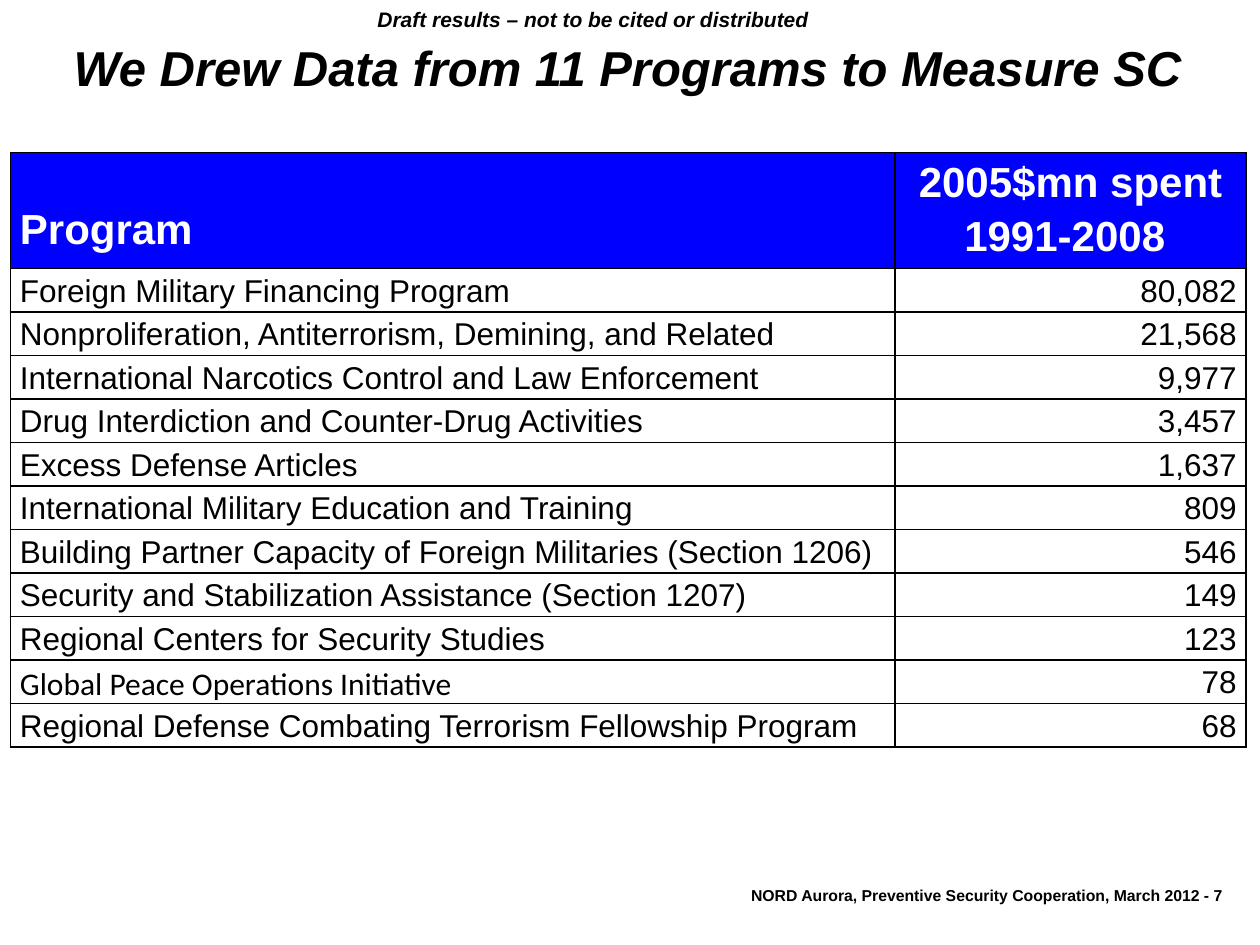
from lxml import etree
from pptx import Presentation
from pptx.dml.color import RGBColor
from pptx.enum.text import MSO_ANCHOR, PP_ALIGN
from pptx.oxml.ns import qn
from pptx.util import Pt

LEFT, CENTER, RIGHT = PP_ALIGN.LEFT, PP_ALIGN.CENTER, PP_ALIGN.RIGHT
TOP, MIDDLE = MSO_ANCHOR.TOP, MSO_ANCHOR.MIDDLE

# Content
TITLE = "We Drew Data from 11 Programs to Measure SC"
DRAFT_NOTICE = "Draft results – not to be cited or distributed"
FOOTER = "NORD Aurora, Preventive Security Cooperation, March 2012 - 7"
HEADINGS = ("Program", "2005$mn spent\n1991-2008 ")
PROGRAMS = [
    ("Foreign Military Financing Program", 80082),
    ("Nonproliferation, Antiterrorism, Demining, and Related", 21568),
    ("International Narcotics Control and Law Enforcement", 9977),
    ("Drug Interdiction and Counter-Drug Activities", 3457),
    ("Excess Defense Articles", 1637),
    ("International Military Education and Training", 809),
    ("Building Partner Capacity of Foreign Militaries (Section 1206)", 546),
    ("Security and Stabilization Assistance (Section 1207)", 149),
    ("Regional Centers for Security Studies", 123),
    ("Global Peace Operations Initiative", 78),
    ("Regional Defense Combating Terrorism Fellowship Program", 68),
]
CALIBRI_PROGRAM = "Global Peace Operations Initiative"

THEME = {
    "font": "Arial", "second_font": "Calibri",
    "black": RGBColor(0, 0, 0), "white": RGBColor(255, 255, 255),
    "header": RGBColor(0, 0, 255), "border": "000000", "border_width": 1,
    "title": 28, "heading": 24, "body": 18, "notice": 12, "footer": 9,
}

# Layout in points
COLUMN_WIDTHS = (505.5, 200.5)
HEADER_HEIGHT, ROW_HEIGHT = 61, 24.4
TABLE_LEFT, TABLE_TOP = 6, 87.2


def write_text(frame, text, size, align=LEFT, color=THEME["black"], bold=False,
               italic=False, font=THEME["font"], line_spacing=1.0):
    frame.text = text
    for paragraph in frame.paragraphs:
        paragraph.alignment = align
        paragraph.line_spacing = line_spacing
        paragraph.space_before = Pt(0)
        for run in paragraph.runs:
            run.font.name = font
            run.font.size = Pt(size)
            run.font.bold = bold
            run.font.italic = italic
            run.font.color.rgb = color


def add_label(slide, box, text, **text_format):
    label = slide.shapes.add_textbox(*map(Pt, box))
    label.text_frame.word_wrap = False
    write_text(label.text_frame, text, bold=True, **text_format)


def add_borders(cell):
    properties = cell._tc.get_or_add_tcPr()
    for position, side in enumerate(("a:lnL", "a:lnR", "a:lnT", "a:lnB")):
        line = etree.Element(qn(side), w=str(Pt(THEME["border_width"])))
        fill = etree.SubElement(line, qn("a:solidFill"))
        etree.SubElement(fill, qn("a:srgbClr"), val=THEME["border"])
        properties.insert(position, line)


def write_cell(cell, text, fill=None, line_spacing=1.15, **text_format):
    cell.margin_left = cell.margin_right = Pt(5.4)
    cell.margin_top = cell.margin_bottom = 0
    cell.vertical_anchor = TOP
    if fill is None:
        cell.fill.background()
    else:
        cell.fill.solid()
        cell.fill.fore_color.rgb = fill
    write_text(cell.text_frame, text, line_spacing=line_spacing, **text_format)
    add_borders(cell)


def add_program_table(slide):
    height = HEADER_HEIGHT + ROW_HEIGHT * len(PROGRAMS)
    table = slide.shapes.add_table(
        len(PROGRAMS) + 1, len(HEADINGS), Pt(TABLE_LEFT), Pt(TABLE_TOP),
        Pt(sum(COLUMN_WIDTHS)), Pt(height)).table
    table.horz_banding = False
    for column, width in zip(table.columns, COLUMN_WIDTHS):
        column.width = Pt(width)
    for index, row in enumerate(table.rows):
        row.height = Pt(ROW_HEIGHT if index else HEADER_HEIGHT)

    # Header row; the wide line sets "Program" level with the second line
    heading_format = dict(size=THEME["heading"], color=THEME["white"], bold=True,
                          fill=THEME["header"])
    write_cell(table.cell(0, 0), HEADINGS[0], line_spacing=2.15, **heading_format)
    write_cell(table.cell(0, 1), HEADINGS[1], align=CENTER, **heading_format)

    # One row per program
    for index, (program, spent) in enumerate(PROGRAMS, start=1):
        font = THEME["second_font" if program == CALIBRI_PROGRAM else "font"]
        write_cell(table.cell(index, 0), program, size=THEME["body"], font=font)
        write_cell(table.cell(index, 1), f"{spent:,}", size=THEME["body"], align=RIGHT)


def main():
    presentation = Presentation()
    presentation.slide_width, presentation.slide_height = Pt(720), Pt(540)
    slide = presentation.slides.add_slide(presentation.slide_layouts[5])

    # Title
    title = slide.shapes.title
    title.left, title.top, title.width, title.height = map(Pt, (34.5, 21, 648, 42.5))
    frame = title.text_frame
    frame.margin_left = frame.margin_right = frame.margin_top = 0
    frame.margin_bottom = Pt(8)
    frame.vertical_anchor = MIDDLE
    write_text(frame, TITLE, THEME["title"], align=CENTER, bold=True, italic=True)

    # Draft notice and footer
    add_label(slide, (207, 0, 264, 21.6), DRAFT_NOTICE, size=THEME["notice"],
              align=CENTER, italic=True)
    add_label(slide, (413, 504, 292.5, 17.3), FOOTER, size=THEME["footer"],
              align=RIGHT, line_spacing=0.9)

    add_program_table(slide)
    presentation.save("out.pptx")


if __name__ == "__main__":
    main()
